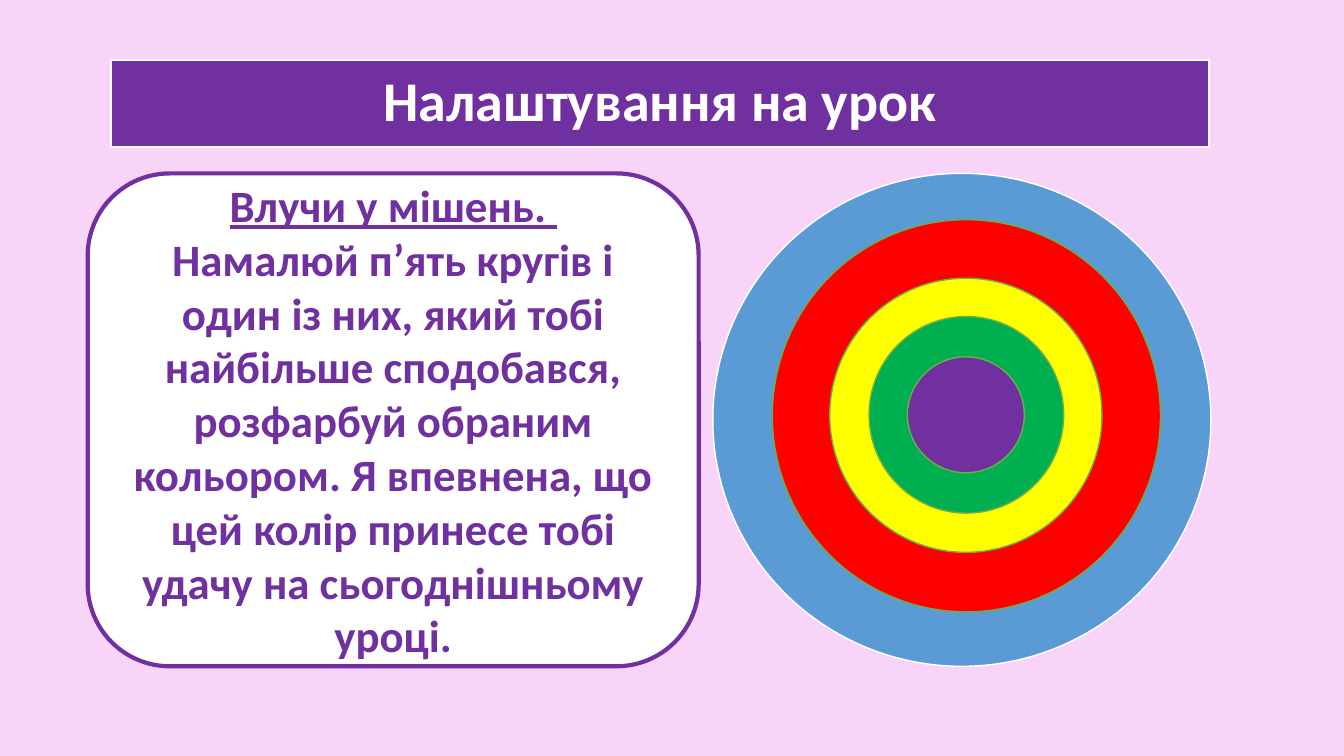
"""Build the lesson warm-up slide with a five-colour target."""
from dataclasses import dataclass

from pptx import Presentation
from pptx.dml.color import RGBColor
from pptx.enum.shapes import MSO_SHAPE
from pptx.enum.text import MSO_ANCHOR, PP_ALIGN
from pptx.util import Pt

RECT = MSO_SHAPE.RECTANGLE
ROUNDED = MSO_SHAPE.ROUNDED_RECTANGLE
OVAL = MSO_SHAPE.OVAL
MIDDLE = MSO_ANCHOR.MIDDLE
CENTER = PP_ALIGN.CENTER

EMU_PER_PX = 9144
FONT = "Calibri"
PINK = RGBColor(0xF8, 0xD4, 0xF8)
PURPLE = RGBColor(0x70, 0x30, 0xA0)
WHITE = RGBColor(0xFF, 0xFF, 0xFF)
BLUE = RGBColor(0x5B, 0x9B, 0xD5)
RED = RGBColor(0xFF, 0x00, 0x00)
YELLOW = RGBColor(0xFF, 0xFF, 0x00)
GREEN = RGBColor(0x00, 0xB0, 0x50)
OLIVE = RGBColor(0x70, 0xAD, 0x47)


@dataclass(frozen=True)
class Box:
    """A filled and outlined shape, placed in px."""
    kind: MSO_SHAPE
    left: int
    top: int
    width: int
    height: int
    fill: RGBColor
    line: RGBColor
    weight: float = 1


@dataclass(frozen=True)
class Line:
    """One centred bold paragraph."""
    text: str
    size: int
    color: RGBColor
    underline: bool = False
    spacing: float = 1.0


TITLE = Box(RECT, 110, 60, 1089, 86, PURPLE, WHITE, 1.5)
TITLE_LINES = [Line("Налаштування на урок", 40, WHITE, spacing=0.9)]
TASK = Box(ROUNDED, 87, 172, 606, 489, WHITE, PURPLE, 3)
TASK_LINES = [
    Line("Влучи у мішень. ", 32, PURPLE, underline=True),
    Line("Намалюй п’ять кругів і один із них, який тобі найбільше сподобався, "
         "розфарбуй обраним кольором. Я впевнена, що цей колір принесе тобі "
         "удачу на сьогоднішньому уроці.", 32, PURPLE),
]
TARGET = [
    Box(OVAL, 707, 172, 494, 489, BLUE, WHITE),
    Box(OVAL, 766, 218, 385, 389, RED, OLIVE),
    Box(OVAL, 823, 276, 270, 272, YELLOW, OLIVE),
    Box(OVAL, 862, 314, 193, 195, GREEN, OLIVE),
    Box(OVAL, 900, 354, 116, 115, PURPLE, OLIVE),
]


def px(n: int) -> int:
    """Turn px into EMU."""
    return n * EMU_PER_PX


def draw_box(slide, box: Box):
    """Draw a box and return its shape."""
    sp = slide.shapes.add_shape(box.kind, px(box.left), px(box.top),
                                px(box.width), px(box.height))
    sp.shadow.inherit = False
    sp.fill.solid()
    sp.fill.fore_color.rgb = box.fill
    sp.line.color.rgb = box.line
    sp.line.width = Pt(box.weight)
    return sp


def write_lines(sp, lines: list[Line]) -> None:
    """Fill a shape with centred paragraphs."""
    tf = sp.text_frame
    tf.word_wrap = True
    tf.vertical_anchor = MIDDLE
    for i, line in enumerate(lines):
        p = tf.add_paragraph() if i else tf.paragraphs[0]
        p.text = line.text
        p.alignment = CENTER
        p.line_spacing = line.spacing
        p.font.name = FONT
        p.font.size = Pt(line.size)
        p.font.bold = True
        p.font.underline = line.underline
        p.font.color.rgb = line.color


def main() -> None:
    """Build and save the slide."""
    prs = Presentation()
    prs.slide_width, prs.slide_height = px(1333), px(750)
    slide = prs.slides.add_slide(prs.slide_layouts[6])
    slide.background.fill.solid()
    slide.background.fill.fore_color.rgb = PINK
    write_lines(draw_box(slide, TITLE), TITLE_LINES)
    write_lines(draw_box(slide, TASK), TASK_LINES)
    for ring in TARGET:
        draw_box(slide, ring)
    prs.save("out.pptx")


if __name__ == "__main__":
    main()
